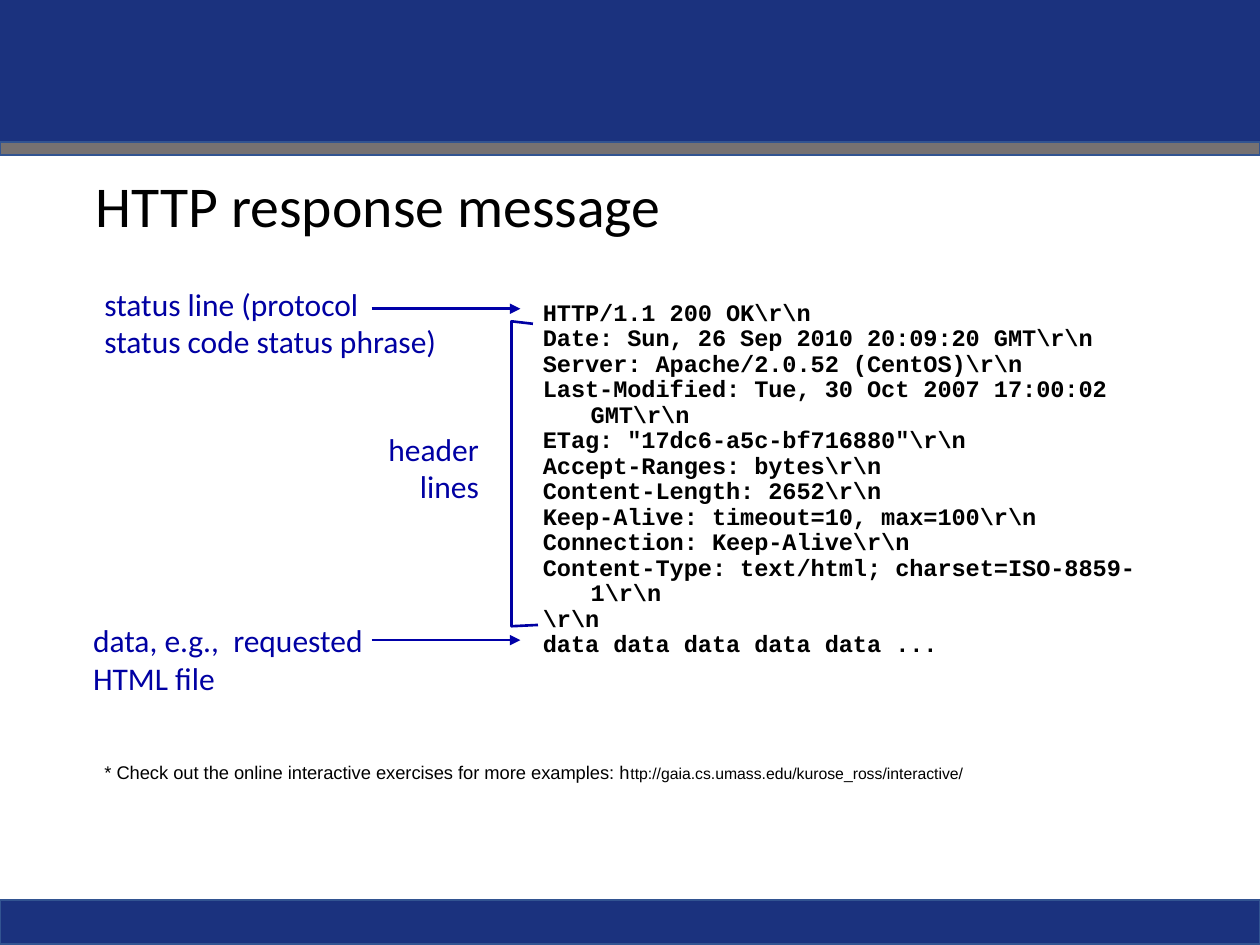
from lxml import etree
from pptx import Presentation
from pptx.dml.color import RGBColor
from pptx.enum.shapes import MSO_CONNECTOR, MSO_SHAPE
from pptx.enum.text import MSO_ANCHOR, PP_ALIGN
from pptx.oxml.ns import qn
from pptx.util import Inches, Pt

NAVY = RGBColor(0x1B, 0x32, 0x7E)
GRAY = RGBColor(0x76, 0x71, 0x71)
EDGE = RGBColor(0x32, 0x54, 0x91)
BLUE = RGBColor(0x00, 0x00, 0xA3)
ARROW = RGBColor(0x00, 0x00, 0xA8)
BLACK = RGBColor(0x00, 0x00, 0x00)

# Content: bands are (top, height, fill, edge)
BANDS = [(7.14, 0.35, NAVY, EDGE), (0, 1.13, NAVY, None), (1.13, 0.1, GRAY, EDGE)]
TITLE = "HTTP response message"
LABELS = [
    ((0.73, 2.21, 3.33, 0.71), ["status line (protocol", "status code status phrase)"],
     PP_ALIGN.LEFT, True),
    ((2.97, 3.36, 0.93, 0.71), ["header", "lines"], PP_ALIGN.RIGHT, False),
    ((0.64, 4.88, 2.96, 0.71), ["data, e.g.,  requested", "HTML file"],
     PP_ALIGN.LEFT, True),
]
REPLY = [
    r"HTTP/1.1 200 OK\r\n",
    r"Date: Sun, 26 Sep 2010 20:09:20 GMT\r\n",
    r"Server: Apache/2.0.52 (CentOS)\r\n",
    r"Last-Modified: Tue, 30 Oct 2007 17:00:02 GMT\r\n",
    r'ETag: "17dc6-a5c-bf716880"\r\n',
    r"Accept-Ranges: bytes\r\n",
    r"Content-Length: 2652\r\n",
    r"Keep-Alive: timeout=10, max=100\r\n",
    r"Connection: Keep-Alive\r\n",
    r"Content-Type: text/html; charset=ISO-8859-1\r\n",
    r"\r\n",
    "data data data data data ...",
]
NOTE = [
    ("* Check out the online interactive exercises for more examples: h", 10.5),
    ("ttp://gaia.cs.umass.edu/kurose_ross/interactive/", 9),
]
BRACKET = [(4.23, 2.57), (4.06, 2.55), (4.06, 4.97), (4.27, 4.96)]
ARROWS = [2.45, 5.08]

prs = Presentation()
prs.slide_width, prs.slide_height = Inches(10), Inches(7.5)
slide = prs.slides.add_slide(prs.slide_layouts[6])
shapes = slide.shapes


def add_text(area, rows, font, color, bold=False, align=PP_ALIGN.LEFT,
             wrap=True, space=None, hang=0):
    """Each row is a paragraph: a list of (text, size) runs."""
    frame = shapes.add_textbox(*map(Inches, area)).text_frame
    frame.word_wrap = wrap
    for i, row in enumerate(rows):
        para = frame.paragraphs[0] if i == 0 else frame.add_paragraph()
        para.alignment = align
        if space:
            para.line_spacing = space
        if hang:
            props = para._p.get_or_add_pPr()
            props.set("marL", str(Inches(hang)))
            props.set("indent", str(-Inches(hang)))
        for text, size in row:
            run = para.add_run()
            run.text = text
            run.font.name, run.font.size = font, Pt(size)
            run.font.bold = bold
            run.font.color.rgb = color
    return frame


# Bands across the slide
for top, height, fill, edge in BANDS:
    band = shapes.add_shape(MSO_SHAPE.RECTANGLE, 0, Inches(top),
                            prs.slide_width, Inches(height))
    band.shadow.inherit = False
    band.fill.solid()
    band.fill.fore_color.rgb = fill
    if edge:
        band.line.color.rgb = edge
        band.line.width = Pt(1)
    else:
        band.line.fill.background()

# Title
title = add_text((0.66, 1.29, 8.62, 0.73), [[(TITLE, 33)]], "Calibri", BLACK, space=0.9)
title.vertical_anchor = MSO_ANCHOR.MIDDLE

# Labels on the left
for area, lines, align, wrap in LABELS:
    add_text(area, [[(line, 18)] for line in lines], "Calibri", BLUE,
             align=align, wrap=wrap)

# Bracket around the header lines
points = [(Inches(x), Inches(y)) for x, y in BRACKET]
path = shapes.build_freeform(*points[0])
path.add_line_segments(points[1:], close=False)
bracket = path.convert_to_shape()
bracket.shadow.inherit = False
bracket.fill.background()
bracket.line.color.rgb = BLUE
bracket.line.width = Pt(1.5)

# Response message
add_text((4.21, 2.34, 5.18, 2.97), [[(line, 13.5)] for line in REPLY],
         "Courier New", BLACK, bold=True, space=0.9, hang=0.38)

# Arrows from labels to message
for y in ARROWS:
    arrow = shapes.add_connector(MSO_CONNECTOR.STRAIGHT, Inches(2.95), Inches(y),
                                 Inches(4.13), Inches(y))
    arrow.line.color.rgb = ARROW
    arrow.line.width = Pt(1.5)
    etree.SubElement(arrow.line._get_or_add_ln(), qn("a:tailEnd"), type="triangle")
    etree.SubElement(arrow._element.spPr, qn("a:effectLst"))

# Footnote
add_text((0.73, 5.99, 7.81, 0.28), [NOTE], "Arial", BLACK)

prs.save("out.pptx")
